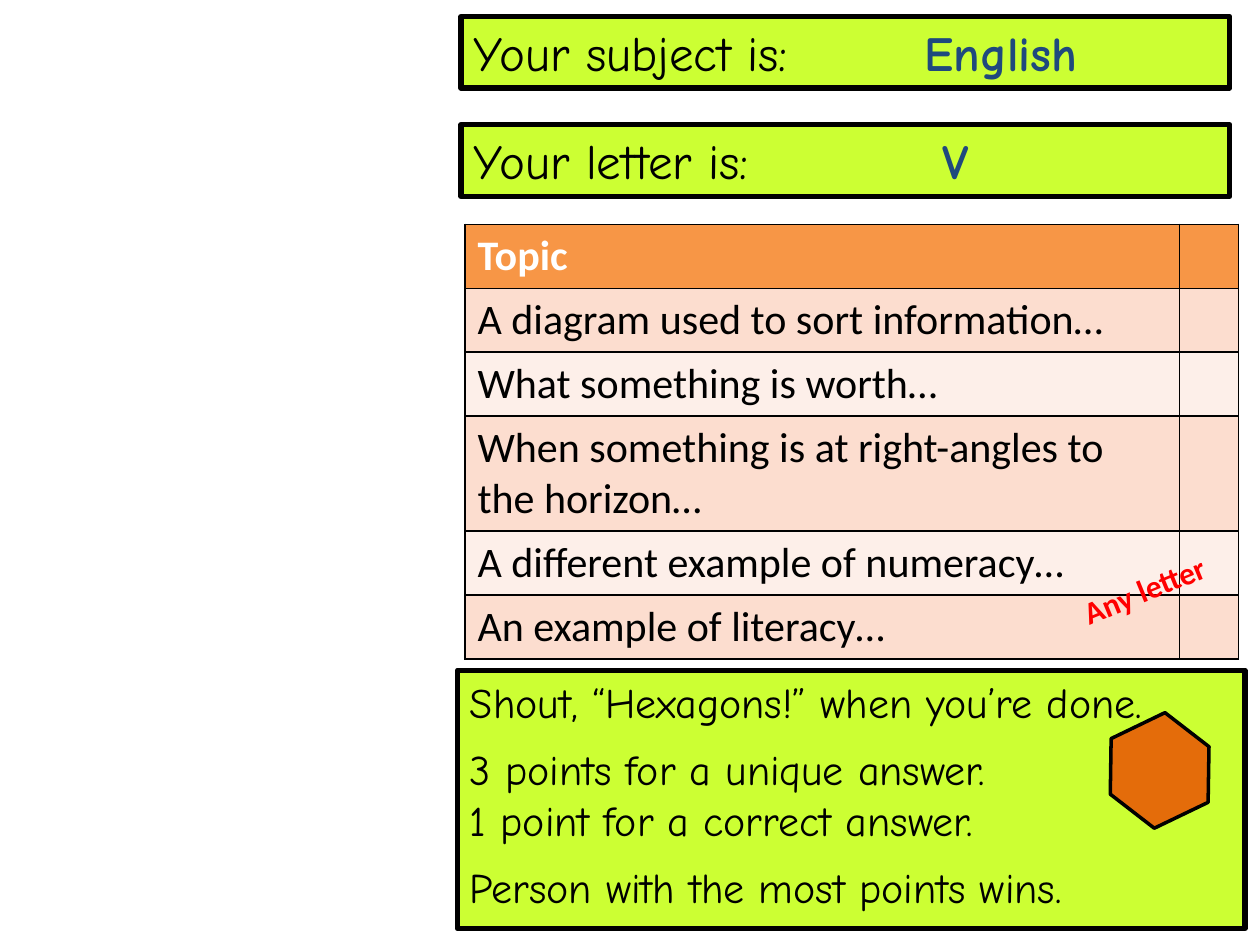
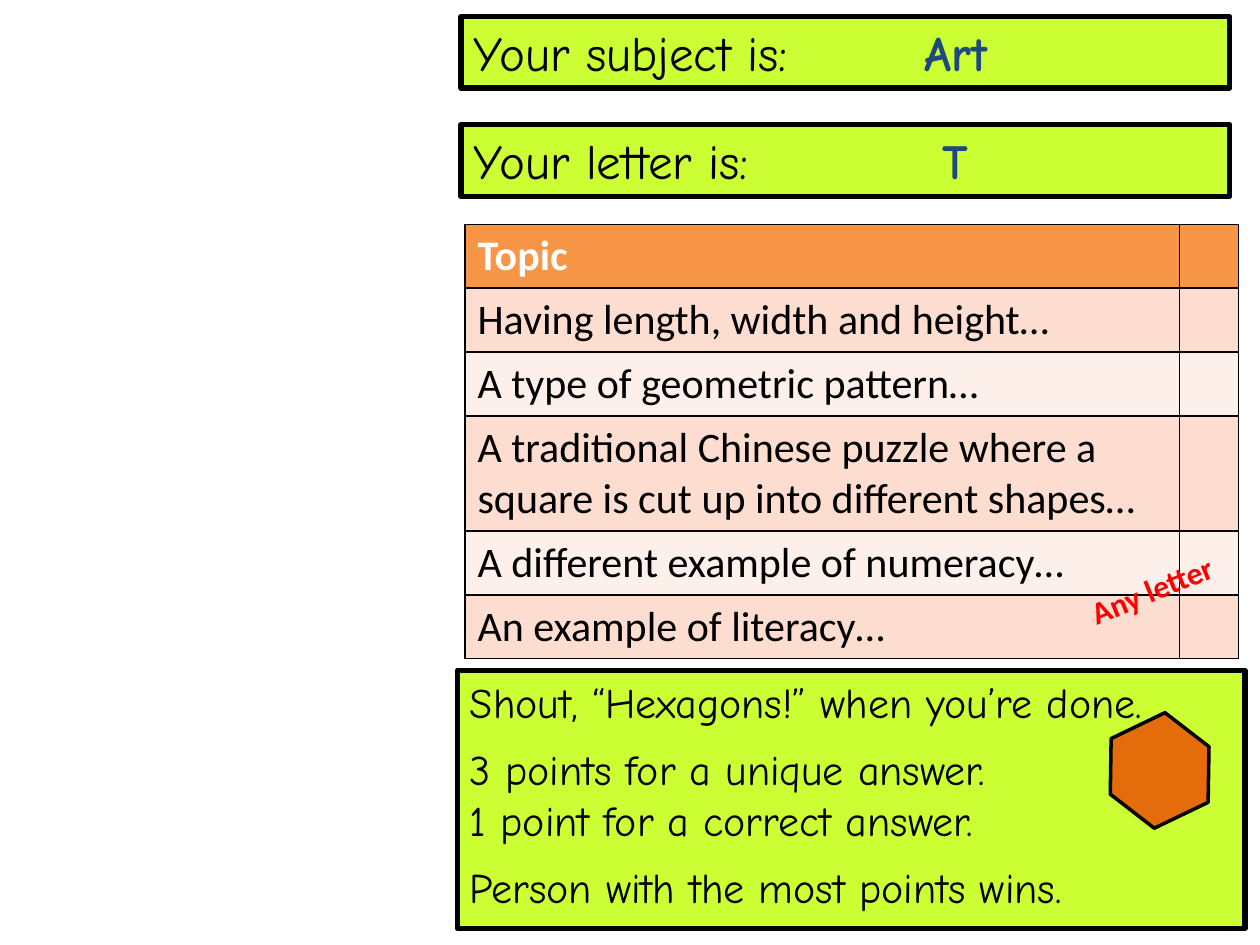
import pptx
import pptx.dml.color
import pptx.enum.shapes
import pptx.enum.text
import pptx.oxml
import pptx.oxml.ns
import pptx.util

Pt = pptx.util.Pt
RGBColor = pptx.dml.color.RGBColor
Shape = pptx.enum.shapes.MSO_SHAPE

BLACK = RGBColor(0x00, 0x00, 0x00)
WHITE = RGBColor(0xFF, 0xFF, 0xFF)
LIME = RGBColor(0xCC, 0xFF, 0x33)
NAVY = RGBColor(0x1F, 0x49, 0x7D)
RED = RGBColor(0xFF, 0x00, 0x00)
HEADER_ORANGE = RGBColor(0xF7, 0x96, 0x46)
HEXAGON_ORANGE = RGBColor(0xE4, 0x6C, 0x0A)
ROW_TINTS = (RGBColor(0xFC, 0xDD, 0xCF), RGBColor(0xFD, 0xEF, 0xE9))

HAND_FONT = "Comic Neue"
PLAIN_FONT = "Calibri"

BAND_LEFT, BAND_WIDTH, BAND_HEIGHT = 263.5, 439.2, 41
SUBJECT_TOP, LETTER_TOP = 9.4, 71.3
COLUMN_WIDTHS = (408.2, 33.8)
ROW_HEIGHT, TALL_ROW_HEIGHT, TALL_ROW = 36.5, 65.8, 3
RULE_GAP = 9.6

RULES = (
    ("Shout, “Hexagons!” when you’re done.", 0),
    ("3 points for a unique answer.", RULE_GAP),
    ("1 point for a correct answer.", 0),
    ("Person with the most points wins.", RULE_GAP),
)
SHARED_TOPICS = ("A different example of numeracy…", "An example of literacy…")
CARDS = (
    ("English", "V", 601.9, (
        "A diagram used to sort information…",
        "What something is worth…",
        "When something is at right-angles to the horizon…",
    )),
    ("Art", "T", 606.2, (
        "Having length, width and height…",
        "A type of geometric pattern…",
        "A traditional Chinese puzzle where a square is cut up into different shapes…",
    )),
)


def add_run(paragraph, text, size, font, color, bold=False):
    run = paragraph.add_run()
    run.text = text
    run.font.size = Pt(size)
    run.font.name = font
    run.font.color.rgb = color
    run.font.bold = bold


def add_outlined_shape(slide, kind, left, top, width, height, fill, line_width):
    shape = slide.shapes.add_shape(kind, Pt(left), Pt(top), Pt(width), Pt(height))
    shape.shadow.inherit = False
    shape.fill.solid()
    shape.fill.fore_color.rgb = fill
    shape.line.color.rgb = BLACK
    shape.line.width = Pt(line_width)
    return shape


def add_panel(slide, left, top, width, height, lines, size):
    panel = add_outlined_shape(slide, Shape.RECTANGLE, left, top, width, height, LIME, 3)
    frame = panel.text_frame
    frame.word_wrap = True
    frame.vertical_anchor = pptx.enum.text.MSO_ANCHOR.TOP
    for index, (text, gap) in enumerate(lines):
        paragraph = frame.add_paragraph() if index else frame.paragraphs[0]
        paragraph.alignment = pptx.enum.text.PP_ALIGN.LEFT
        if gap:
            paragraph.space_before = Pt(gap)
        add_run(paragraph, text, size, HAND_FONT, BLACK)


def add_label(slide, left, top, width, height, text, size, font, color):
    label = slide.shapes.add_textbox(Pt(left), Pt(top), Pt(width), Pt(height))
    label.text_frame.word_wrap = True
    add_run(label.text_frame.paragraphs[0], text, size, font, color, bold=True)
    return label


def add_prompt(slide, top, prompt, answer, answer_left, answer_width):
    add_panel(slide, BAND_LEFT, top, BAND_WIDTH, BAND_HEIGHT, ((prompt, 0),), 28)
    add_label(slide, answer_left, top, answer_width, BAND_HEIGHT, answer, 28, HAND_FONT, NAVY)


def style_cell(cell, fill):
    properties = cell._tc.get_or_add_tcPr()
    for edge in ("lnL", "lnR", "lnT", "lnB"):
        properties.append(pptx.oxml.parse_xml(
            f'<a:{edge} {pptx.oxml.ns.nsdecls("a")} w="{Pt(1)}">'
            f'<a:solidFill><a:srgbClr val="{BLACK}"/></a:solidFill></a:{edge}>'
        ))
    cell.fill.solid()
    cell.fill.fore_color.rgb = fill


def add_topic_table(slide, topics):
    rows = ("Topic",) + topics
    heights = [TALL_ROW_HEIGHT if index == TALL_ROW else ROW_HEIGHT for index in range(len(rows))]
    table = slide.shapes.add_table(
        len(rows), len(COLUMN_WIDTHS), Pt(265.7), Pt(128.2),
        Pt(sum(COLUMN_WIDTHS)), Pt(sum(heights)),
    ).table
    for column, width in zip(table.columns, COLUMN_WIDTHS):
        column.width = Pt(width)
    for index, (text, height) in enumerate(zip(rows, heights)):
        header = index == 0
        table.rows[index].height = Pt(height)
        for cell in table.rows[index].cells:
            style_cell(cell, HEADER_ORANGE if header else ROW_TINTS[(index - 1) % 2])
        paragraph = table.cell(index, 0).text_frame.paragraphs[0]
        add_run(paragraph, text, 24, PLAIN_FONT, WHITE if header else BLACK, bold=header)


def add_card(presentation, subject, letter, note_left, topics):
    slide = presentation.slides.add_slide(presentation.slide_layouts[6])
    add_topic_table(slide, topics + SHARED_TOPICS)
    add_prompt(slide, SUBJECT_TOP, "Your subject is:", subject, 521.3, 181.4)
    add_prompt(slide, LETTER_TOP, "Your letter is:", letter, 531.4, 45.4)
    add_panel(slide, 261.4, 383, 450, 147.6, RULES, 24)
    hexagon = add_outlined_shape(
        slide, Shape.HEXAGON, 631.4, 411.8, 62.6, 56.9, HEXAGON_ORANGE, 2)
    hexagon.rotation = 334.3
    note = add_label(slide, note_left, 322.6, 103.7, 28.8, "Any letter", 18, PLAIN_FONT, RED)
    note.text_frame.paragraphs[0].alignment = pptx.enum.text.PP_ALIGN.CENTER
    note.rotation = 337.7


def main():
    presentation = pptx.Presentation()
    presentation.slide_width = Pt(720)
    presentation.slide_height = Pt(540)
    for card in CARDS:
        add_card(presentation, *card)
    presentation.save("out.pptx")


if __name__ == "__main__":
    main()
